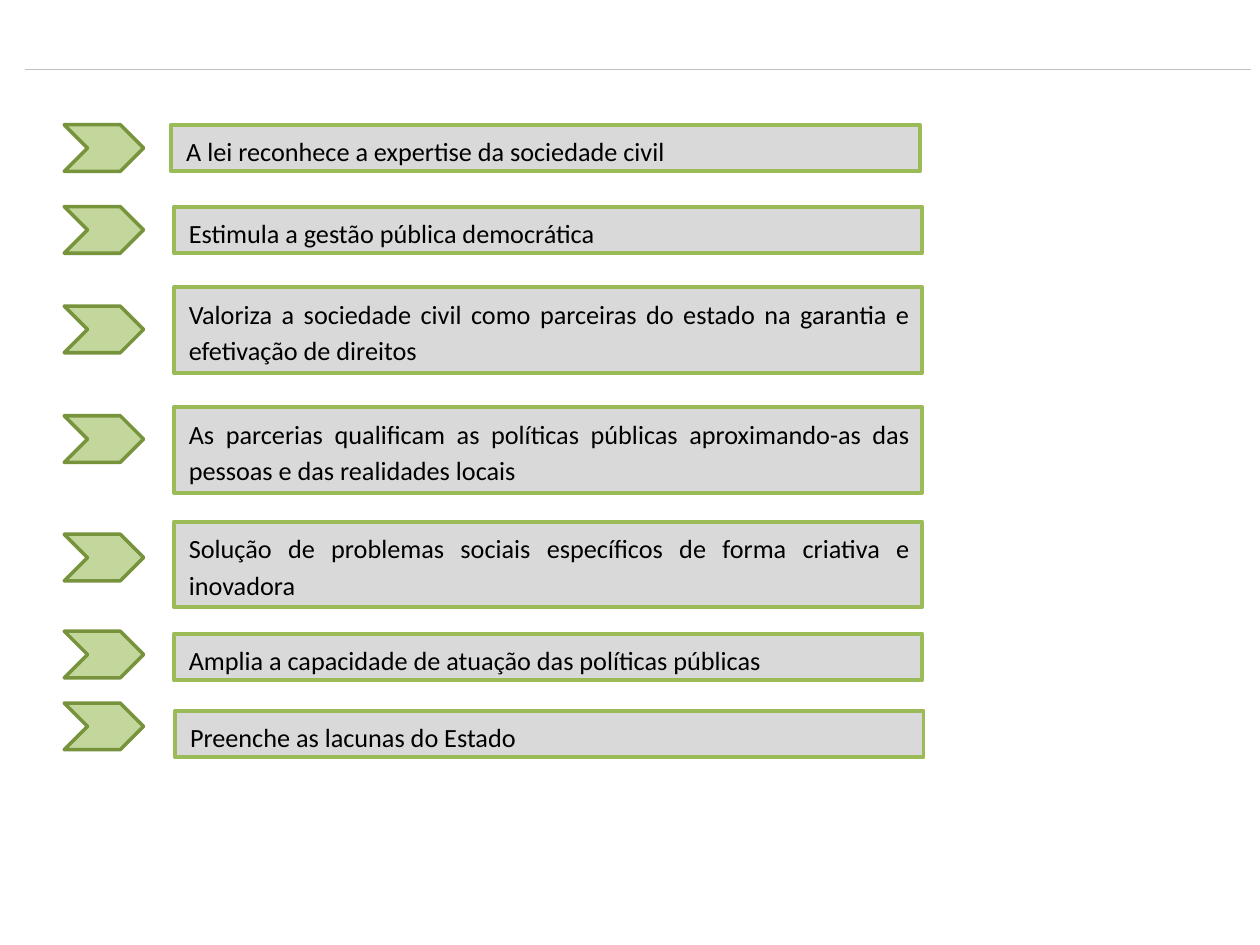
import pptx
import pptx.util
import pptx.dml.color
import pptx.enum.shapes
import pptx.enum.text
import pptx.oxml.ns
import lxml.etree

SLIDE_WIDTH, SLIDE_HEIGHT = 10, 7.5
RULE_LEFT, RULE_RIGHT, RULE_TOP = 0.2, 9.93, 0.55
ARROW_LEFT, ARROW_WIDTH = 0.51, 0.63
BOX_WIDTH = 5.94
ROW_HEIGHT = {1: 0.37, 2: 0.68}

# text, lines, box left, box top, arrow top
BENEFITS = [
    ("A lei reconhece a expertise da sociedade civil", 1, 1.36, 0.99, 0.99),
    ("Estimula a gestão pública democrática", 1, 1.38, 1.64, 1.64),
    ("Valoriza a sociedade civil como parceiras do estado na garantia e "
     "efetivação de direitos", 2, 1.38, 2.28, 2.43),
    ("As parcerias qualificam as políticas públicas aproximando-as das "
     "pessoas e das realidades locais", 2, 1.38, 3.23, 3.3),
    ("Solução de problemas sociais específicos de forma criativa e inovadora",
     2, 1.38, 4.14, 4.24),
    ("Amplia a capacidade de atuação das políticas públicas", 1, 1.38, 5.03, 5.01),
    ("Preenche as lacunas do Estado", 1, 1.39, 5.64, 5.58),
]


def color(value):
    return pptx.dml.color.RGBColor.from_string(value)


def add_shape(page, kind, place, fill, line, weight):
    shape = page.shapes.add_shape(kind, *map(pptx.util.Inches, place))
    shape.shadow.inherit = False
    shape.fill.solid()
    shape.fill.fore_color.rgb = color(fill)
    shape.line.color.rgb = color(line)
    shape.line.width = pptx.util.Pt(weight)
    return shape


def add_text(box, text):
    frame = box.text_frame
    frame.word_wrap = True
    frame.auto_size = pptx.enum.text.MSO_AUTO_SIZE.SHAPE_TO_FIT_TEXT
    frame.vertical_anchor = pptx.enum.text.MSO_ANCHOR.TOP
    para = frame.paragraphs[0]
    para.alignment = pptx.enum.text.PP_ALIGN.JUSTIFY
    para.line_spacing = 1.15
    para._p.get_or_add_pPr().set("marL", str(pptx.util.Inches(0.02)))
    span = para.add_run()
    span.text = text
    span.font.name = "Calibri"
    span.font.size = pptx.util.Pt(15)
    span.font.color.rgb = color("000000")


def add_rule(page):
    ends = (RULE_LEFT, RULE_TOP, RULE_RIGHT, RULE_TOP)
    rule = page.shapes.add_connector(
        pptx.enum.shapes.MSO_CONNECTOR.STRAIGHT, *map(pptx.util.Inches, ends))
    rule.line.color.rgb = color("BFBFBF")
    rule.line.width = pptx.util.Pt(0.75)
    lxml.etree.SubElement(rule._element.spPr, pptx.oxml.ns.qn("a:effectLst"))


def main():
    deck = pptx.Presentation()
    deck.slide_width = pptx.util.Inches(SLIDE_WIDTH)
    deck.slide_height = pptx.util.Inches(SLIDE_HEIGHT)
    page = deck.slides.add_slide(deck.slide_layouts[6])
    shapes = pptx.enum.shapes.MSO_SHAPE
    add_rule(page)
    for text, lines, box_left, box_top, arrow_top in BENEFITS:
        box = add_shape(page, shapes.RECTANGLE,
                        (box_left, box_top, BOX_WIDTH, ROW_HEIGHT[lines]),
                        "D9D9D9", "9BBB59", 2.25)
        add_text(box, text)
        add_shape(page, shapes.CHEVRON,
                  (ARROW_LEFT, arrow_top, ARROW_WIDTH, ROW_HEIGHT[1]),
                  "C3D69B", "77933C", 2)
    deck.save("out.pptx")


if __name__ == "__main__":
    main()
